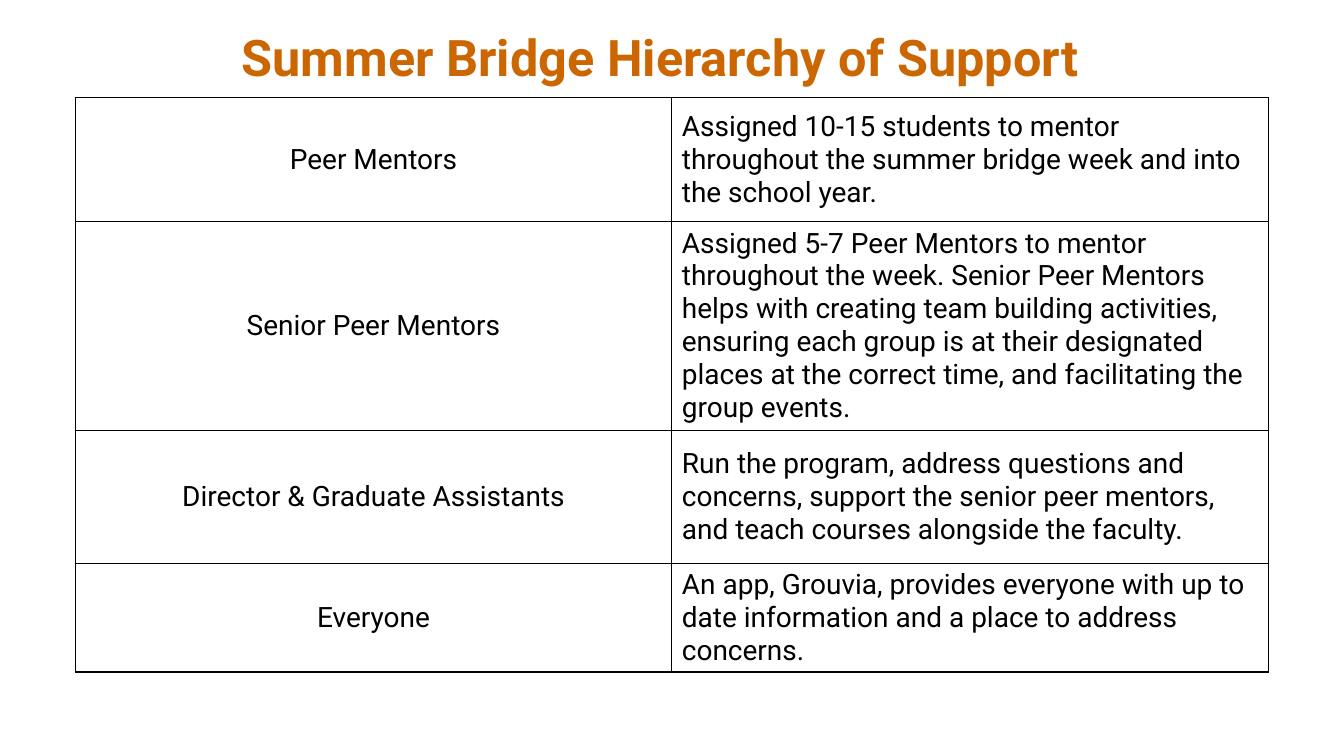
from dataclasses import dataclass

from lxml.etree import SubElement
from pptx import Presentation
from pptx.dml.color import RGBColor
from pptx.enum.text import MSO_ANCHOR, PP_ALIGN
from pptx.oxml.ns import qn
from pptx.util import Cm, Pt

TITLE = "Summer Bridge Hierarchy of Support"
# Role, what the role does, row height in centimetres
SUPPORT_LEVELS = [
    ("Peer Mentors",
     "Assigned 10-15 students to mentor throughout the summer bridge week "
     "and into the school year.", 3.12),
    ("Senior Peer Mentors",
     "Assigned 5-7 Peer Mentors to mentor throughout the week. Senior Peer "
     "Mentors helps with creating team building activities, ensuring each "
     "group is at their designated places at the correct time, and "
     "facilitating the group events.", 5.26),
    ("Director & Graduate Assistants",
     "Run the program, address questions and concerns, support the senior "
     "peer mentors, and teach courses alongside the faculty.", 3.35),
    ("Everyone",
     "An app, Grouvia, provides everyone with up to date information and a "
     "place to address concerns.", 2.39),
]


@dataclass(frozen=True)
class Theme:
    font: str = "Roboto"
    title_color: str = "CC6600"
    text_color: str = "000000"
    border_color: str = "000000"
    title_size: int = 36
    body_size: int = 20
    border_width: int = 1


THEME = Theme()


def write_text(text_frame, text, *, size=THEME.body_size, color=THEME.text_color,
               bold=False, align=PP_ALIGN.LEFT):
    paragraph = text_frame.paragraphs[0]
    paragraph.alignment = align
    run = paragraph.add_run()
    run.text = text
    run.font.name = THEME.font
    run.font.size = Pt(size)
    run.font.bold = bold
    run.font.color.rgb = RGBColor.from_string(color)


def add_borders(cell):
    """Line all four sides; must run before the cell's fill is set."""
    properties = cell._tc.get_or_add_tcPr()
    for side in ("lnL", "lnR", "lnT", "lnB"):
        line = SubElement(properties, qn(f"a:{side}"), w=str(Pt(THEME.border_width)))
        fill = SubElement(line, qn("a:solidFill"))
        SubElement(fill, qn("a:srgbClr"), val=THEME.border_color)


def add_title(slide):
    title = slide.shapes.title
    title.left, title.top = Cm(0.84), Cm(0.1)
    title.width, title.height = Cm(31.6), Cm(2.64)
    title.text_frame.vertical_anchor = MSO_ANCHOR.MIDDLE
    write_text(title.text_frame, TITLE, size=THEME.title_size,
               color=THEME.title_color, bold=True, align=PP_ALIGN.CENTER)


def add_support_table(slide):
    total_height = sum(height for _, _, height in SUPPORT_LEVELS)
    table = slide.shapes.add_table(len(SUPPORT_LEVELS), 2, Cm(1.9), Cm(2.46),
                                   Cm(30.06), Cm(total_height)).table
    table.first_row = False
    table.horz_banding = False
    for row, (role, duties, height) in zip(table.rows, SUPPORT_LEVELS):
        row.height = Cm(height)
        columns = ((role, PP_ALIGN.CENTER), (duties, PP_ALIGN.LEFT))
        for cell, (text, align) in zip(row.cells, columns):
            add_borders(cell)
            cell.fill.background()
            cell.vertical_anchor = MSO_ANCHOR.MIDDLE
            write_text(cell.text_frame, text, align=align)


def main():
    presentation = Presentation()
    presentation.slide_width, presentation.slide_height = Cm(33.87), Cm(19.05)
    slide = presentation.slides.add_slide(presentation.slide_layouts[5])
    add_title(slide)
    add_support_table(slide)
    presentation.save("out.pptx")


if __name__ == "__main__":
    main()
